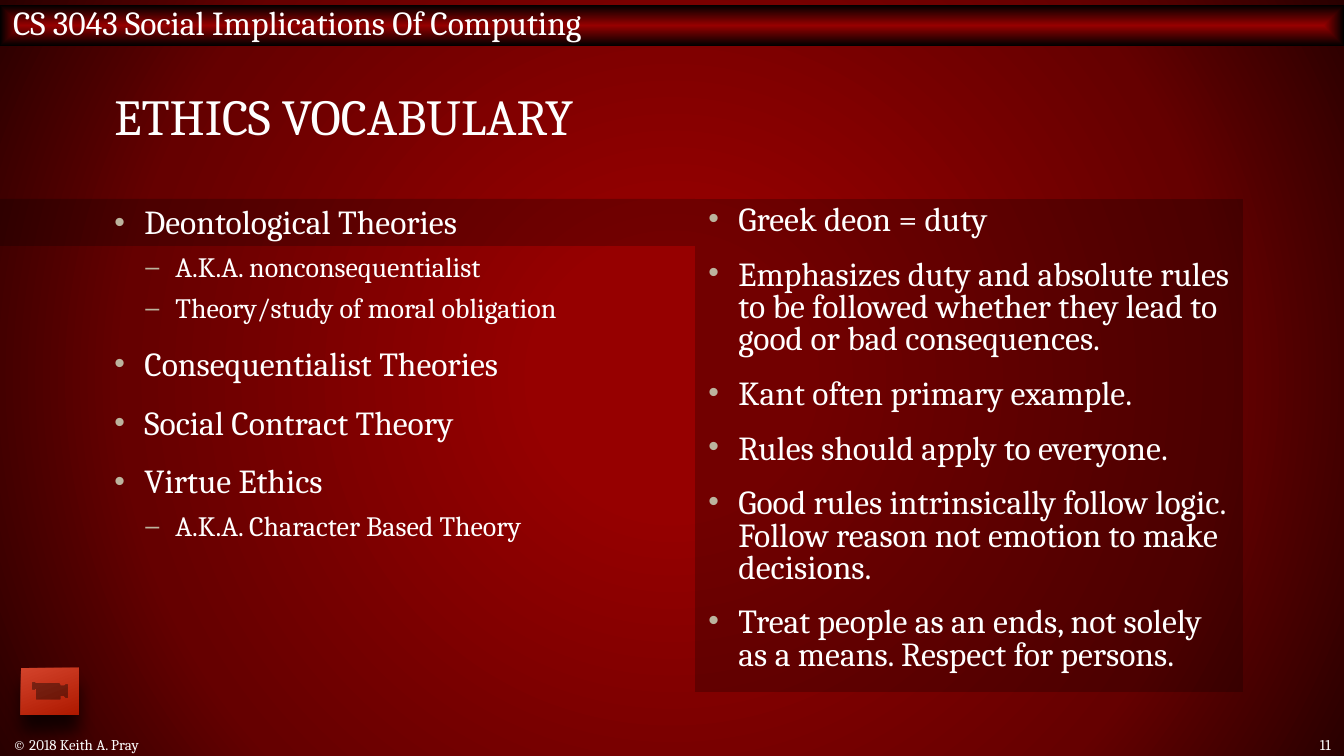
from pptx import Presentation
from pptx.dml.color import RGBColor
from pptx.enum.shapes import MSO_SHAPE
from pptx.enum.text import MSO_ANCHOR, MSO_AUTO_SIZE, PP_ALIGN
from pptx.oxml import parse_xml
from pptx.oxml.ns import nsdecls, qn
from pptx.util import Emu, Pt

RECTANGLE = MSO_SHAPE.RECTANGLE
MOVIE_BUTTON = MSO_SHAPE.ACTION_BUTTON_MOVIE
TOP, MIDDLE = MSO_ANCHOR.TOP, MSO_ANCHOR.MIDDLE
LEFT, RIGHT = PP_ALIGN.LEFT, PP_ALIGN.RIGHT
NO_AUTOFIT = MSO_AUTO_SIZE.NONE

FONT = "Cambria"
WHITE, BLACK, RED, BULLET = "FFFFFF", "000000", "960000", "BCB49E"
CENTER_CIRCLE = '<a:path path="circle"><a:fillToRect l="50000" t="50000" r="50000" b="50000"/></a:path>'
CENTER_SHAPE = CENTER_CIRCLE.replace("circle", "shape")
DIAGONAL = '<a:lin ang="4140000" scaled="0"/>'

WIDTH, HEIGHT = 1344, 756
PANEL_TOP, PANEL_HEIGHT, COLUMN_WIDTH = 199, 493, 548
LEFT_COLUMN, RIGHT_COLUMN = 101, 695
FOOTER_TOP, FOOTER_HEIGHT = 734, 22

THEORIES = [
    (0, "Deontological Theories"),
    (1, "A.K.A. nonconsequentialist"),
    (1, "Theory/study of moral obligation"),
    (0, "Consequentialist Theories"),
    (0, "Social Contract Theory"),
    (0, "Virtue Ethics"),
    (1, "A.K.A. Character Based Theory"),
]
DEONTOLOGY = [
    (0, "Greek deon = duty"),
    (0, "Emphasizes duty and absolute rules to be followed whether they lead to good or bad consequences."),
    (0, "Kant often primary example."),
    (0, "Rules should apply to everyone."),
    (0, "Good rules intrinsically follow logic. Follow reason not emotion to make decisions."),
    (0, "Treat people as an ends, not solely as a means. Respect for persons."),
]
# bullet, font size, space before, indent in px
LEVELS = [("•", 18, 12, 30), ("–", 15, 6, 61)]
HANGING = 30


def px(length):
    return Emu(round(length * 914400 / 134.4))


def color(value):
    return RGBColor.from_string(value)


def place(shape, box):
    shape.left, shape.top, shape.width, shape.height = map(px, box)


def style(paragraph, size, alignment=LEFT):
    paragraph.alignment = alignment
    paragraph.font.name = FONT
    paragraph.font.size = Pt(size)
    paragraph.font.color.rgb = color(WHITE)


def set_gradient(properties, stops, direction):
    """Replace the solid fill of a properties element by a gradient."""
    stop_xml = "".join(
        f'<a:gs pos="{position * 1000}"><a:srgbClr val="{value}"/></a:gs>' for position, value in stops)
    gradient = parse_xml(
        f'<a:gradFill {nsdecls("a")} rotWithShape="1"><a:gsLst>{stop_xml}</a:gsLst>{direction}</a:gradFill>')
    properties.replace(properties.find(qn("a:solidFill")), gradient)


def add_plain_shape(slide, box, fill, kind=RECTANGLE):
    shape = slide.shapes.add_shape(kind, *map(px, box))
    shape.shadow.inherit = False
    shape.line.fill.background()
    shape.fill.solid()
    shape.fill.fore_color.rgb = color(fill)
    return shape


def paint_background(slide):
    slide.background.fill.solid()
    properties = slide.element.find(".//" + qn("p:bgPr"))
    set_gradient(properties, [(17, RED), (71, "650000"), (100, "290000")], CENTER_CIRCLE)


def add_banner(slide, box, text):
    banner = add_plain_shape(slide, box, RED)
    set_gradient(banner.element.spPr, [(0, RED), (100, BLACK)], CENTER_SHAPE)
    frame = banner.text_frame
    frame.vertical_anchor = MIDDLE
    frame.margin_top, frame.margin_bottom = 0, px(7)
    frame.text = text
    style(frame.paragraphs[0], 18)


def add_highlight(slide, box):
    highlight = add_plain_shape(slide, box, BLACK)
    value = highlight.element.spPr.find(".//" + qn("a:srgbClr"))
    value.append(parse_xml(f'<a:alpha {nsdecls("a")} val="24000"/>'))


def fill_title(slide, box, text):
    title = slide.shapes.title
    place(title, box)
    frame = title.text_frame
    frame.text = text
    frame.vertical_anchor = MIDDLE
    frame.auto_size = NO_AUTOFIT
    frame.paragraphs[0].line_spacing = 0.8
    style(frame.paragraphs[0], 27)


def add_bullet(paragraph, bullet, indent):
    properties = paragraph._p.get_or_add_pPr()
    properties.set("marL", str(px(indent)))
    properties.set("indent", str(-px(HANGING)))
    for xml in (f'<a:buClr {nsdecls("a")}><a:srgbClr val="{BULLET}"/></a:buClr>',
                f'<a:buSzPct {nsdecls("a")} val="90000"/>',
                f'<a:buFont {nsdecls("a")} typeface="Arial"/>',
                f'<a:buChar {nsdecls("a")} char="{bullet}"/>'):
        properties.append(parse_xml(xml))


def fill_list(placeholder, box, items, line_spacing):
    place(placeholder, box)
    frame = placeholder.text_frame
    frame.vertical_anchor = TOP
    frame.auto_size = NO_AUTOFIT
    for index, (level, text) in enumerate(items):
        paragraph = frame.add_paragraph() if index else frame.paragraphs[0]
        bullet, size, space, indent = LEVELS[level]
        paragraph.text = text
        paragraph.level = level
        add_bullet(paragraph, bullet, indent)
        paragraph.line_spacing = line_spacing
        paragraph.space_before = Pt(space if index else 0)
        style(paragraph, size)


def add_footer_text(slide, box, text, alignment):
    frame = slide.shapes.add_textbox(*map(px, box)).text_frame
    frame.word_wrap = True
    frame.vertical_anchor = MIDDLE
    frame.text = text
    style(frame.paragraphs[0], 8, alignment)


def add_movie_button(slide, box):
    button = add_plain_shape(slide, box, "D3432B", MOVIE_BUTTON)
    properties = button.element.spPr
    set_gradient(properties, [(0, "D3432B"), (100, "AE1900")], DIAGONAL)
    properties.find(qn("a:effectLst")).append(parse_xml(
        f'<a:outerShdw {nsdecls("a")} blurRad="{Pt(9)}" dist="{Pt(9)}" dir="5400000" rotWithShape="0">'
        f'<a:srgbClr val="{BLACK}"><a:alpha val="70000"/></a:srgbClr></a:outerShdw>'))


def build_slide(presentation):
    slide = presentation.slides.add_slide(presentation.slide_layouts[3])
    theories, details = slide.placeholders[1], slide.placeholders[2]
    right_panel = (RIGHT_COLUMN, PANEL_TOP, COLUMN_WIDTH, PANEL_HEIGHT)
    paint_background(slide)
    add_banner(slide, (0, 5, WIDTH, 41), "CS 3043 Social Implications Of Computing")
    add_highlight(slide, (0, PANEL_TOP, RIGHT_COLUMN, 47))
    add_highlight(slide, right_panel)
    fill_title(slide, (LEFT_COLUMN, 54, 1142, 134), "ETHICS VOCABULARY")
    fill_list(details, right_panel, DEONTOLOGY, 0.8)
    fill_list(theories, (LEFT_COLUMN, PANEL_TOP, COLUMN_WIDTH, PANEL_HEIGHT), THEORIES, 0.9)
    for placeholder in (slide.shapes.title, details, theories):
        slide.shapes.element.append(placeholder.element)
    add_footer_text(slide, (0, FOOTER_TOP, 817, FOOTER_HEIGHT), "© 2018 Keith A. Pray", LEFT)
    add_footer_text(slide, (1253, FOOTER_TOP, 91, FOOTER_HEIGHT), "11", RIGHT)
    add_movie_button(slide, (21, 668, 58, 47))


def main():
    presentation = Presentation()
    presentation.slide_width, presentation.slide_height = px(WIDTH), px(HEIGHT)
    build_slide(presentation)
    presentation.save("out.pptx")


if __name__ == "__main__":
    main()
